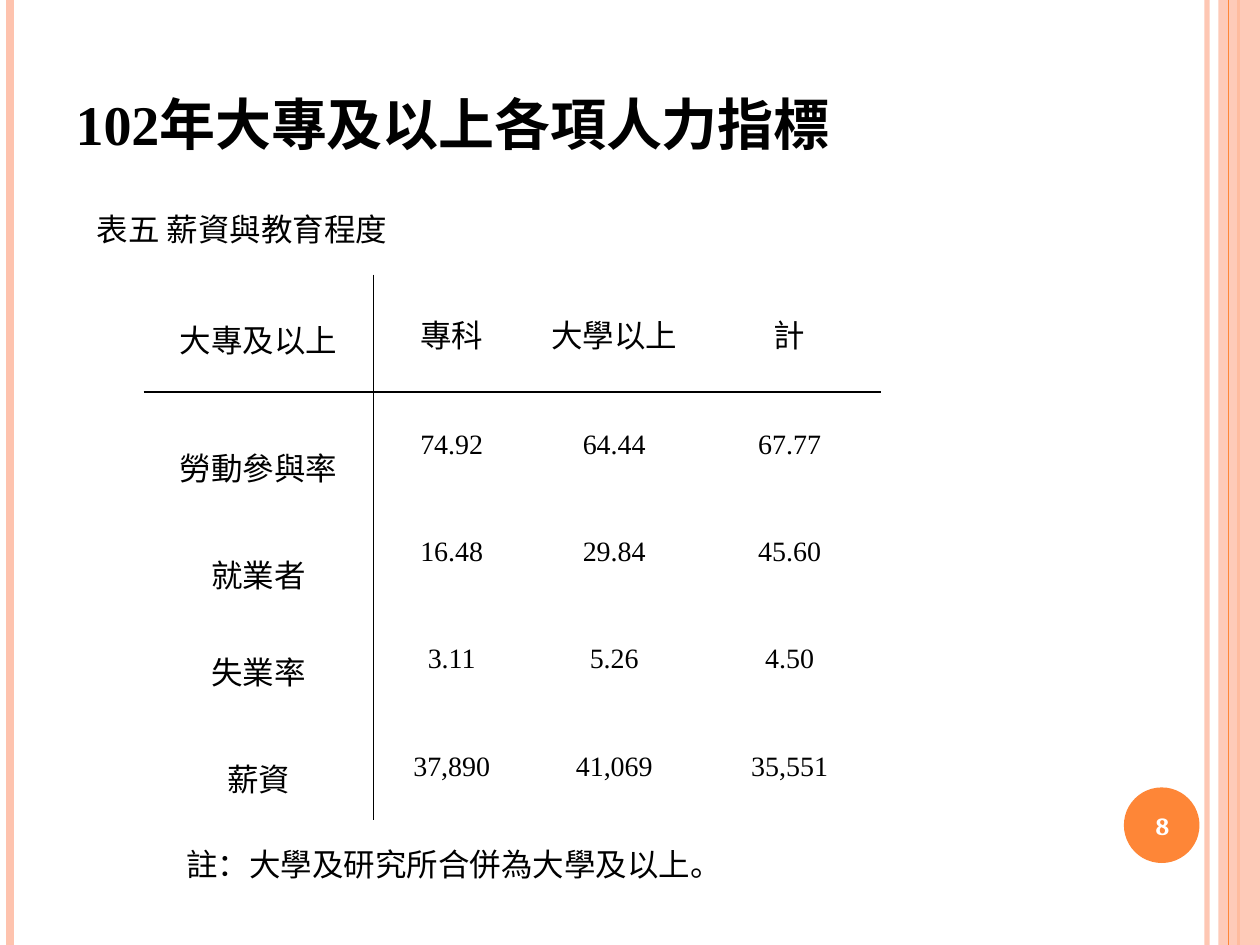
"""Builds the slide of manpower indicators by education level."""
from dataclasses import dataclass

from lxml.etree import SubElement
from pptx import Presentation
from pptx.dml.color import RGBColor
from pptx.enum.shapes import MSO_CONNECTOR as Connector, MSO_SHAPE as Shape
from pptx.enum.text import MSO_ANCHOR as Anchor, MSO_AUTO_SIZE as AutoSize, PP_ALIGN as Align
from pptx.oxml.ns import qn
from pptx.util import Emu, Inches, Pt

WIDTH, HEIGHT = Inches(10), Inches(7.5)
SERIF, CJK, NUMBER_FONT = "Times New Roman", "Noto Sans CJK SC", "Cambria"
BLACK, WHITE, ORANGE, PEACH = "000000", "FFFFFF", "FE8637", "FEC3AE"


@dataclass(frozen=True)
class Frame:
    """A place on the slide, in percent of its width and height."""
    left: float
    top: float
    width: float
    height: float

    def lengths(self) -> tuple:
        return (across(self.left), down(self.top), across(self.width), down(self.height))


@dataclass(frozen=True)
class Stripe:
    """A vertical line over the full height of the slide."""
    left: float
    color: str
    points: float
    opacity: int = 100


@dataclass(frozen=True)
class Caption:
    """A line of text in a box of its own."""
    text: str
    frame: Frame
    size: int = 18
    font: str = SERIF
    color: str = BLACK
    bold: bool = False
    align: Align = Align.LEFT
    anchor: Anchor = Anchor.TOP
    wrap: bool = True


@dataclass(frozen=True)
class Row:
    """A table row: its label, the label's top inset in inches, and its values."""
    label: str
    inset: float
    values: tuple
    height: float = 11.33
    size: int = 16


STRIPES_BEHIND = (Stripe(95.8, PEACH, 3, 93), Stripe(0.8, PEACH, 4.5), Stripe(98.3, ORANGE, 1.5))
STRIPE_ON_BAND = Stripe(97.5, ORANGE, 0.75)
BAND = Frame(96.7, 0, 3.3, 100)
BADGE = Frame(89.2, 83.33, 6, 8)
TITLE = Caption("102年大專及以上各項人力指標", Frame(5, 4, 81.7, 16.8), 40, bold=True, anchor=Anchor.MIDDLE)
CAPTIONS = (
    Caption("8", Frame(88.9, 83.6, 6.7, 7.6), 14, NUMBER_FONT, WHITE, True, Align.CENTER, Anchor.MIDDLE),
    Caption("表五 薪資與教育程度", Frame(6.7, 21.6, 25.4, 5.33), wrap=False),
    Caption("註：大學及研究所合併為大學及以上。", Frame(13.8, 88.8, 70.9, 5.33), font=CJK),
)
TABLE_LEFT, TABLE_TOP = 11.4, 29.07
COLUMNS = (18.25, 12.4, 13.4, 14.45)
ROWS = (
    Row("大專及以上", 0.33, ("專科", "大學以上", "計"), 12.4, 18),
    Row("勞動參與率", 0.41, ("74.92", "64.44", "67.77")),
    Row("就業者", 0.41, ("16.48", "29.84", "45.60")),
    Row("失業率", 0.33, ("3.11", "5.26", "4.50")),
    Row("薪資", 0.33, ("37,890", "41,069", "35,551")),
)


def across(percent: float) -> Emu:
    return Emu(int(WIDTH * percent / 100))


def down(percent: float) -> Emu:
    return Emu(int(HEIGHT * percent / 100))


def rgb(color: str) -> RGBColor:
    return RGBColor.from_string(color)


def set_opacity(properties, percent: int) -> None:
    for color in properties.iter(qn("a:srgbClr")):
        SubElement(color, qn("a:alpha"), val=str(percent * 1000))


def write(text_frame, text: str, size: int, font: str = SERIF, color: str = BLACK,
          bold: bool = False, align: Align = Align.CENTER):
    para = text_frame.paragraphs[0]
    para.alignment = align
    span = para.add_run()
    span.text = text
    para.font.size, para.font.name, para.font.bold = Pt(size), font, bold
    para.font.color.rgb = rgb(color)
    properties = span._r.get_or_add_rPr()
    SubElement(properties, qn("a:ea"), typeface=CJK)
    return properties


def add_stripe(page, stripe: Stripe) -> None:
    x = across(stripe.left)
    line = page.shapes.add_connector(Connector.STRAIGHT, x, 0, x, HEIGHT)
    line.line.color.rgb = rgb(stripe.color)
    line.line.width = Pt(stripe.points)
    properties = line._element.spPr
    if stripe.opacity < 100:
        set_opacity(properties, stripe.opacity)
    SubElement(properties, qn("a:effectLst"))


def add_plain_shape(page, kind: Shape, frame: Frame, color: str, opacity: int = 100) -> None:
    shape = page.shapes.add_shape(kind, *frame.lengths())
    shape.shadow.inherit = False
    shape.fill.solid()
    shape.fill.fore_color.rgb = rgb(color)
    shape.line.fill.background()
    if opacity < 100:
        set_opacity(shape._element.spPr, opacity)


def fill_caption(box, caption: Caption):
    box.left, box.top, box.width, box.height = caption.frame.lengths()
    box.text_frame.word_wrap = caption.wrap
    box.text_frame.auto_size = AutoSize.NONE
    box.text_frame.vertical_anchor = caption.anchor
    return write(box.text_frame, caption.text, caption.size, caption.font,
                 caption.color, caption.bold, caption.align)


def set_borders(cell, ruled_sides: str) -> None:
    properties = cell._tc.get_or_add_tcPr()
    for side in "LRTB":
        line = SubElement(properties, qn(f"a:ln{side}"), w=str(Pt(1)))
        if side in ruled_sides:
            fill = SubElement(line, qn("a:solidFill"))
            SubElement(fill, qn("a:srgbClr"), val=BLACK)
        else:
            SubElement(line, qn("a:noFill"))


def add_indicator_table(page) -> None:
    frame = Frame(TABLE_LEFT, TABLE_TOP, sum(COLUMNS), sum(row.height for row in ROWS))
    table = page.shapes.add_table(len(ROWS), len(COLUMNS), *frame.lengths()).table
    table.first_row = table.horz_banding = False
    for column, width in zip(table.columns, COLUMNS):
        column.width = across(width)
    for r, row in enumerate(ROWS):
        table.rows[r].height = down(row.height)
        for c, text in enumerate((row.label, *row.values)):
            cell = table.cell(r, c)
            set_borders(cell, {0: "R", 1: "L"}.get(c, "") + {0: "B", 1: "T"}.get(r, ""))
            cell.fill.background()
            cell.margin_left = cell.margin_right = Inches(0.04)
            if c == 0:
                cell.margin_top = Inches(row.inset)
            else:
                cell.vertical_anchor = Anchor.MIDDLE
            write(cell.text_frame, text, row.size if c else 18)


def main() -> None:
    deck = Presentation()
    deck.slide_width, deck.slide_height = WIDTH, HEIGHT
    page = deck.slides.add_slide(deck.slide_layouts[5])
    for stripe in STRIPES_BEHIND:
        add_stripe(page, stripe)
    add_plain_shape(page, Shape.RECTANGLE, BAND, PEACH, 87)
    add_stripe(page, STRIPE_ON_BAND)
    add_plain_shape(page, Shape.OVAL, BADGE, ORANGE)
    fill_caption(page.shapes.title, TITLE).set("cap", "small")
    add_indicator_table(page)
    for caption in CAPTIONS:
        fill_caption(page.shapes.add_textbox(*caption.frame.lengths()), caption)
    deck.save("out.pptx")


if __name__ == "__main__":
    main()
